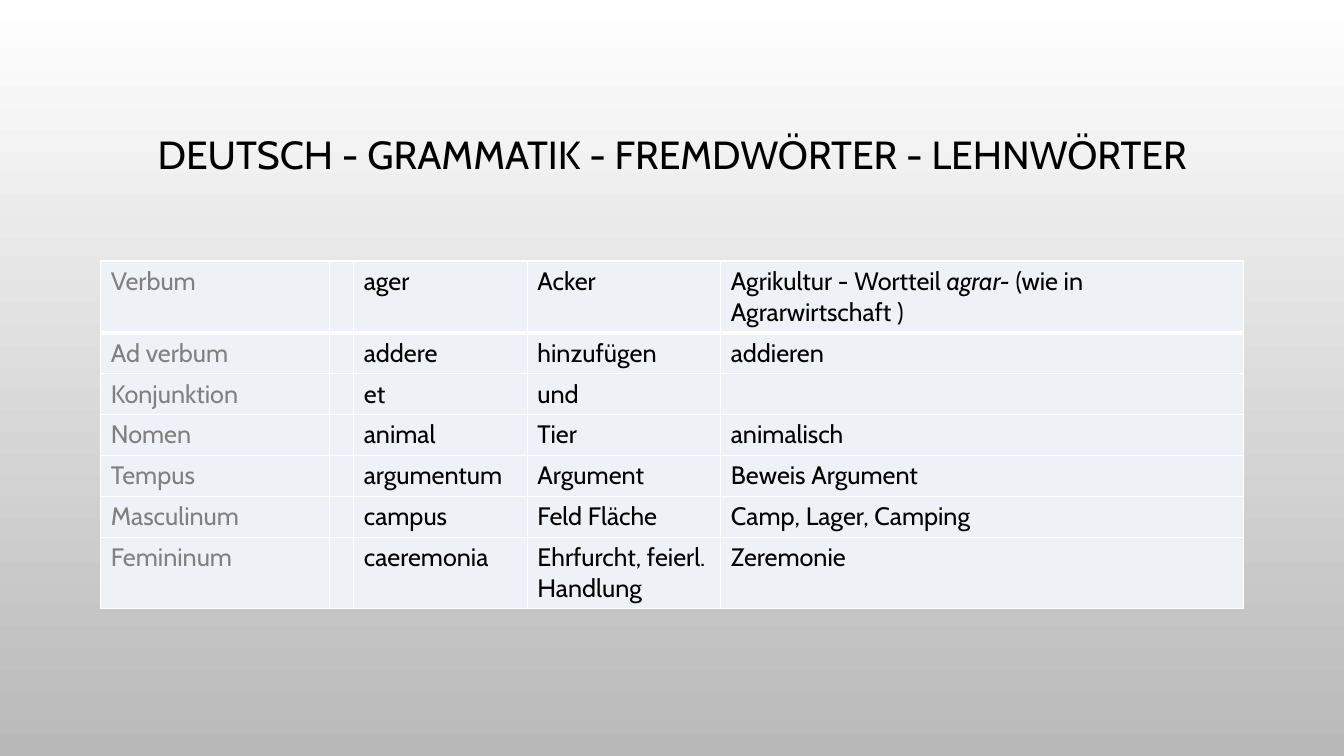
from dataclasses import dataclass

from lxml import etree
from pptx import Presentation
from pptx.dml.color import RGBColor
from pptx.enum import text
from pptx.oxml import ns
from pptx.util import Pt

HEADING = "DEUTSCH - GRAMMATIK - FREMDWÖRTER - LEHNWÖRTER"
# Grammar term, gap, Latin word, German meaning, derived word.
# Within a cell, every second piece between "*" marks is italic.
VOCABULARY = [
    ("Verbum", "", "ager", "Acker",
     "Agrikultur - Wortteil *agrar-* (wie in Agrarwirtschaft )"),
    ("Ad verbum", "", "addere", "hinzufügen", "addieren"),
    ("Konjunktion", "", "et", "und", ""),
    ("Nomen", "", "animal", "Tier", "animalisch"),
    ("Tempus", "", "argumentum", "Argument", "Beweis Argument"),
    ("Masculinum", "", "campus", "Feld Fläche", "Camp, Lager, Camping"),
    ("Femininum", "", "caeremonia", "Ehrfurcht, feierl. Handlung", "Zeremonie"),
]


@dataclass(frozen=True)
class Theme:
    font: str = "Cabin"
    heading_size: int = 28
    cell_size: int = 18
    ink: str = "000000"
    term: str = "808080"
    cell: str = "EEF2F7"
    rule: str = "FFFFFF"
    sky: str = "FFFFFF"
    ground: str = "B9B9B9"


THEME = Theme()
SLIDE_SIZE = (960, 540)
MARGIN = 72
CONTENT_WIDTH = SLIDE_SIZE[0] - 2 * MARGIN
HEADING_TOP, HEADING_HEIGHT = 49, 126
TABLE_TOP, ROW_HEIGHT = 186.5, 29.2
COLUMN_WIDTHS = [163.5, 16.8, 124, 138.2, 373.5]


def style(paragraph, size, color):
    paragraph.font.name = THEME.font
    paragraph.font.size = Pt(size)
    paragraph.font.color.rgb = RGBColor.from_string(color)


def add_borders(cell, bottom_width):
    """Rule all four sides; call before the fill, which must follow in the XML."""
    properties = cell._tc.get_or_add_tcPr()
    for side, width in zip("LRTB", (1, 1, 1, bottom_width)):
        line = etree.SubElement(properties, ns.qn(f"a:ln{side}"), w=str(Pt(width)))
        fill = etree.SubElement(line, ns.qn("a:solidFill"))
        etree.SubElement(fill, ns.qn("a:srgbClr"), val=THEME.rule)


def paint_background(slide):
    fill = slide.background.fill
    fill.gradient()
    fill.gradient_angle = 270
    for stop, color, position in zip(
            fill.gradient_stops, (THEME.sky, THEME.ground), (0, 1)):
        stop.color.rgb = RGBColor.from_string(color)
        stop.position = position


def add_heading(slide):
    heading = slide.shapes.title
    heading.left, heading.top = Pt(MARGIN), Pt(HEADING_TOP)
    heading.width, heading.height = Pt(CONTENT_WIDTH), Pt(HEADING_HEIGHT)
    frame = heading.text_frame
    frame.text = HEADING
    frame.word_wrap = True
    frame.vertical_anchor = text.MSO_ANCHOR.MIDDLE
    paragraph = frame.paragraphs[0]
    paragraph.alignment = text.PP_ALIGN.CENTER
    paragraph.line_spacing = 0.9
    style(paragraph, THEME.heading_size, THEME.ink)


def fill_cell(cell, entry, color):
    paragraph = cell.text_frame.paragraphs[0]
    style(paragraph, THEME.cell_size, color)
    for index, piece in enumerate(entry.split("*")):
        if piece:
            run = paragraph.add_run()
            run.text = piece
            if index % 2:
                run.font.italic = True


def add_vocabulary(slide):
    table = slide.shapes.add_table(
        len(VOCABULARY), len(COLUMN_WIDTHS), Pt(MARGIN), Pt(TABLE_TOP),
        Pt(CONTENT_WIDTH), Pt(ROW_HEIGHT * len(VOCABULARY))).table
    table.first_row = table.horz_banding = False
    for column, width in zip(table.columns, COLUMN_WIDTHS):
        column.width = Pt(width)
    for r, entries in enumerate(VOCABULARY):
        table.rows[r].height = Pt(ROW_HEIGHT)
        for c, entry in enumerate(entries):
            cell = table.cell(r, c)
            fill_cell(cell, entry, THEME.ink if c else THEME.term)
            add_borders(cell, bottom_width=1 if r else 3)
            cell.fill.solid()
            cell.fill.fore_color.rgb = RGBColor.from_string(THEME.cell)


def main():
    deck = Presentation()
    deck.slide_width, deck.slide_height = map(Pt, SLIDE_SIZE)
    slide = deck.slides.add_slide(deck.slide_layouts.get_by_name("Title Only"))
    paint_background(slide)
    add_heading(slide)
    add_vocabulary(slide)
    deck.save("out.pptx")


if __name__ == "__main__":
    main()
